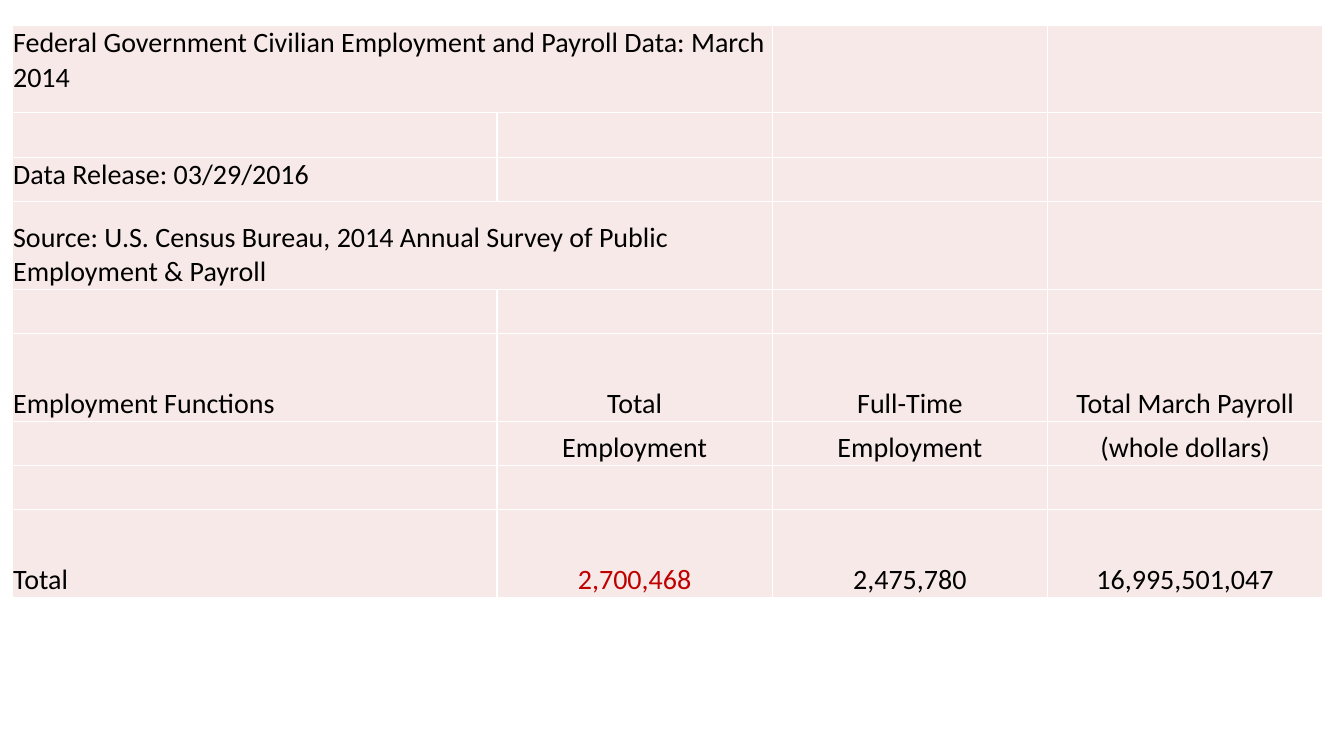
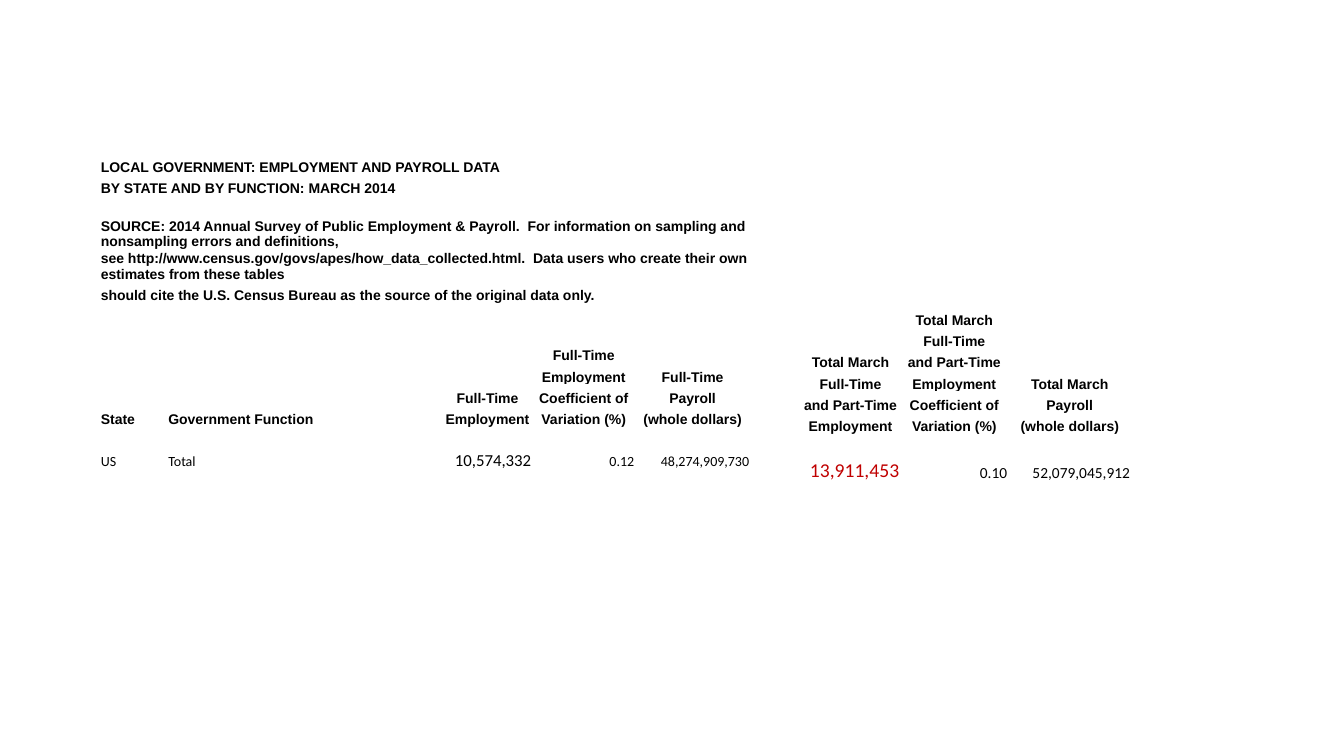
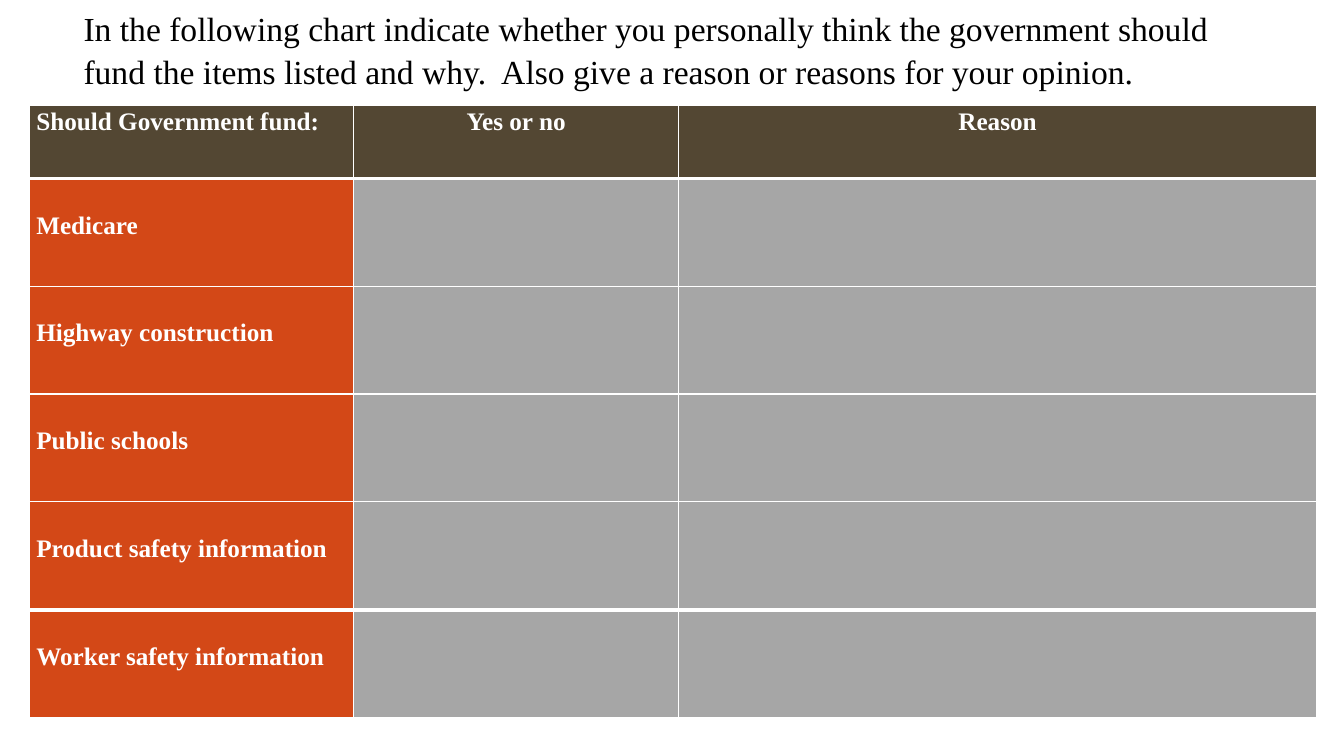
from pptx import Presentation
from pptx import util as u
from pptx.dml.color import RGBColor
from pptx.enum import text
from pptx.oxml.xmlchemy import OxmlElement

COLORS = {
    "black": "000000", "white": "FFFFFF", "red": "C00000", "blush": "F7E9E8",
    "brown": "534733", "orange": "D34817", "gray": "A6A6A6",
}
SLIDE_WIDTH, SLIDE_HEIGHT = 13.33, 7.5
LEFT, CENTER, RIGHT = text.PP_ALIGN.LEFT, text.PP_ALIGN.CENTER, text.PP_ALIGN.RIGHT
TOP, BOTTOM = text.MSO_ANCHOR.TOP, text.MSO_ANCHOR.BOTTOM
TIGHT = (0.01, 0.01, 0.01, 0)
LINE_SPACING = 1.07


def rgb(name):
    return RGBColor.from_string(COLORS[name])


def style_paragraph(para, font, size, color="black", bold=False, align=LEFT):
    para.alignment = align
    para.font.name, para.font.size = font, u.Pt(size)
    para.font.bold = bold
    para.font.color.rgb = rgb(color)


def set_borders(cell, widths):
    """Draw white edges; widths maps L, R, T, B to points."""
    properties = cell._tc.get_or_add_tcPr()
    for index, side in enumerate("LRTB"):
        line = OxmlElement(f"a:ln{side}")
        line.set("w", str(u.Pt(widths[side])))
        fill = OxmlElement("a:solidFill")
        color = OxmlElement("a:srgbClr")
        color.set("val", COLORS["white"])
        fill.append(color)
        line.append(fill)
        properties.insert(index, line)


def add_grid(page, left, top, columns, rows, fill=None, empty_size=10):
    """Add a plain table whose cells are all empty and share one fill."""
    frame = page.shapes.add_table(
        len(rows), len(columns), u.Inches(left), u.Inches(top),
        u.Inches(sum(columns)), u.Inches(sum(rows)))
    table = frame.table
    table.first_row = table.horz_banding = False
    for column, width in zip(table.columns, columns):
        column.width = u.Inches(width)
    for row, height in zip(table.rows, rows):
        row.height = u.Inches(height)
    for cell in table.iter_cells():
        cell.margin_left, cell.margin_top, cell.margin_right, cell.margin_bottom = (
            u.Inches(margin) for margin in TIGHT)
        if fill:
            set_borders(cell, dict.fromkeys("LRTB", 1))
            cell.fill.solid()
            cell.fill.fore_color.rgb = rgb(fill)
        else:
            cell.fill.background()
        # An empty cell keeps its row low only with a small end mark
        end_mark = OxmlElement("a:endParaRPr")
        end_mark.set("sz", str(empty_size * 100))
        cell.text_frame.paragraphs[0]._p.append(end_mark)
    return table


def write_cell(table, row, column, words, font, size, color="black", bold=False,
               align=LEFT, anchor=BOTTOM, span=1):
    cell = table.cell(row, column)
    if span > 1:
        cell.merge(table.cell(row, column + span - 1))
    cell.text = words
    cell.vertical_anchor = anchor
    style_paragraph(cell.text_frame.paragraphs[0], font, size, color, bold, align)
    return cell


def write_heading(table, column, last_row, lines):
    """Stack heading lines, one per row, down to last_row."""
    for row, line in enumerate(lines, last_row - len(lines) + 1):
        write_cell(table, row, column, line, "Arial", 10, bold=True, align=CENTER)


# Slide 1: federal employment
def build_federal(page):
    low, high = 0.44, 0.87
    table = add_grid(page, 0.12, 0.25, [4.81] + [2.73] * 3,
                     [high, low, low, high, low, high, low, low, high], "blush")
    intro = [
        (0, "Federal Government Civilian Employment and Payroll Data: March 2014", TOP, 2),
        (2, "Data Release: 03/29/2016", TOP, 1),
        (3, "Source: U.S. Census Bureau, 2014 Annual Survey of Public Employment & Payroll",
         BOTTOM, 2),
        (5, "Employment Functions", BOTTOM, 1),
        (8, "Total", BOTTOM, 1),
    ]
    for row, words, anchor, span in intro:
        write_cell(table, row, 0, words, "Calibri", 20, anchor=anchor, span=span)
    figures = {
        5: ("Total", "Full-Time", "Total March Payroll"),
        6: ("Employment", "Employment", "(whole dollars)"),
        8: ("2,700,468", "2,475,780", "16,995,501,047"),
    }
    for row, values in figures.items():
        for column, words in enumerate(values, 1):
            color = "red" if (row, column) == (8, 1) else "black"
            write_cell(table, row, column, words, "Calibri", 20, color, align=CENTER)


# Slide 2: local employment, full-time figures at left
def build_full_time(page, left, top):
    line, double = 0.21, 0.32
    rows = [line] * 3 + [double] * 2 + [line] * 2 + [0.18] + [line] * 5 + [0.22]
    table = add_grid(page, left, top, [0.67, 2.73, 0.89, 1.02, 1.14], rows)
    notes = [
        (0, "LOCAL GOVERNMENT: EMPLOYMENT AND PAYROLL DATA", 3),
        (1, "BY STATE AND BY FUNCTION: MARCH 2014", 2),
        (3, "SOURCE: 2014 Annual Survey of Public Employment & Payroll.  For information "
            "on sampling and nonsampling errors and definitions,", 5),
        (4, "see http://www.census.gov/govs/apes/how_data_collected.html.  Data users who "
            "create their own estimates from these tables", 5),
        (5, "should cite the U.S. Census Bureau as the source of the original data only.", 4),
    ]
    for row, words, span in notes:
        write_cell(table, row, 0, words, "Arial", 10, bold=True, span=span)
    for column, words in enumerate(("State", "Government Function")):
        write_cell(table, 11, column, words, "Arial", 10, bold=True)
    headings = [
        ("Full-Time", "Employment"),
        ("Full-Time", "Employment", "Coefficient of", "Variation (%)"),
        ("Full-Time", "Payroll", "(whole dollars)"),
    ]
    for column, lines in enumerate(headings, 2):
        write_heading(table, column, 11, lines)
    values = [("US", 10, LEFT), ("Total", 10, LEFT), ("10,574,332", 12, RIGHT),
              ("0.12", 10, RIGHT), ("48,274,909,730", 10, RIGHT)]
    for column, (words, size, align) in enumerate(values):
        write_cell(table, 13, column, words, "Calibri", size, align=align)


# Slide 2: total March figures at right
def build_march_total(page, left, top):
    table = add_grid(page, left, top, [0.99, 1.07, 1.22], [0.21] * 7 + [0.27])
    headings = [
        ("Total March", "Full-Time", "and Part-Time", "Employment"),
        ("Total March", "Full-Time", "and Part-Time", "Employment",
         "Coefficient of", "Variation (%)"),
        ("Total March", "Payroll", "(whole dollars)"),
    ]
    values = [("13,911,453", 14, "red"), ("0.10", 11, "black"),
              ("52,079,045,912", 11, "black")]
    for column, (lines, (words, size, color)) in enumerate(zip(headings, values)):
        write_heading(table, column, 5, lines)
        write_cell(table, 7, column, words, "Calibri", size, color, align=RIGHT)


# Slide 3: instruction above the opinion form
def build_instruction(page, left, top, width, height):
    box = page.shapes.add_textbox(*(u.Inches(n) for n in (left, top, width, height)))
    box.text_frame.word_wrap = True
    para = box.text_frame.paragraphs[0]
    para.text = ("In the following chart indicate whether you personally think the "
                 "government should fund the items listed and why.  Also give a reason "
                 "or reasons for your opinion.")
    para.line_spacing = LINE_SPACING
    style_paragraph(para, "Times New Roman", 24)


def build_opinion_form(page, left, top):
    items = ["Medicare", "Highway construction", "Public schools",
             "Product safety information", "Worker safety information"]
    table = add_grid(page, left, top, [3.22, 3.22, 6.33],
                     [0.72] + [1.07] * len(items), "gray")

    def write_label(row, column, words, fill, align=LEFT, top_margin=0):
        cell = write_cell(table, row, column, words, "Times New Roman", 18, "white",
                          True, align, TOP)
        cell.margin_left = cell.margin_right = u.Inches(0.07)
        cell.margin_top = u.Inches(top_margin)
        cell.text_frame.paragraphs[0].line_spacing = LINE_SPACING
        cell.fill.fore_color.rgb = rgb(fill)

    for column, words in enumerate(("Should Government fund:", "Yes or no", "Reason")):
        write_label(0, column, words, "brown", CENTER if column else LEFT)
    for row, words in enumerate(items, 1):
        write_label(row, 0, words, "orange", top_margin=0.31)
    # Thick rules under the header and above the last item
    for upper in (0, len(items) - 1):
        for column in range(3):
            for row, side in ((upper, "B"), (upper + 1, "T")):
                properties = table.cell(row, column)._tc.tcPr
                properties["LRTB".index(side)].set("w", str(u.Pt(3)))


def main():
    deck = Presentation()
    deck.slide_width, deck.slide_height = u.Inches(SLIDE_WIDTH), u.Inches(SLIDE_HEIGHT)
    federal, local, opinion = (
        deck.slides.add_slide(deck.slide_layouts[6]) for _ in range(3))
    build_federal(federal)
    build_full_time(local, 0.99, 1.53)
    build_march_total(local, 7.94, 3.05)
    build_opinion_form(opinion, 0.29, 1.05)
    build_instruction(opinion, 0.73, 0, 11.41, 0.97)
    deck.save("out.pptx")


if __name__ == "__main__":
    main()
